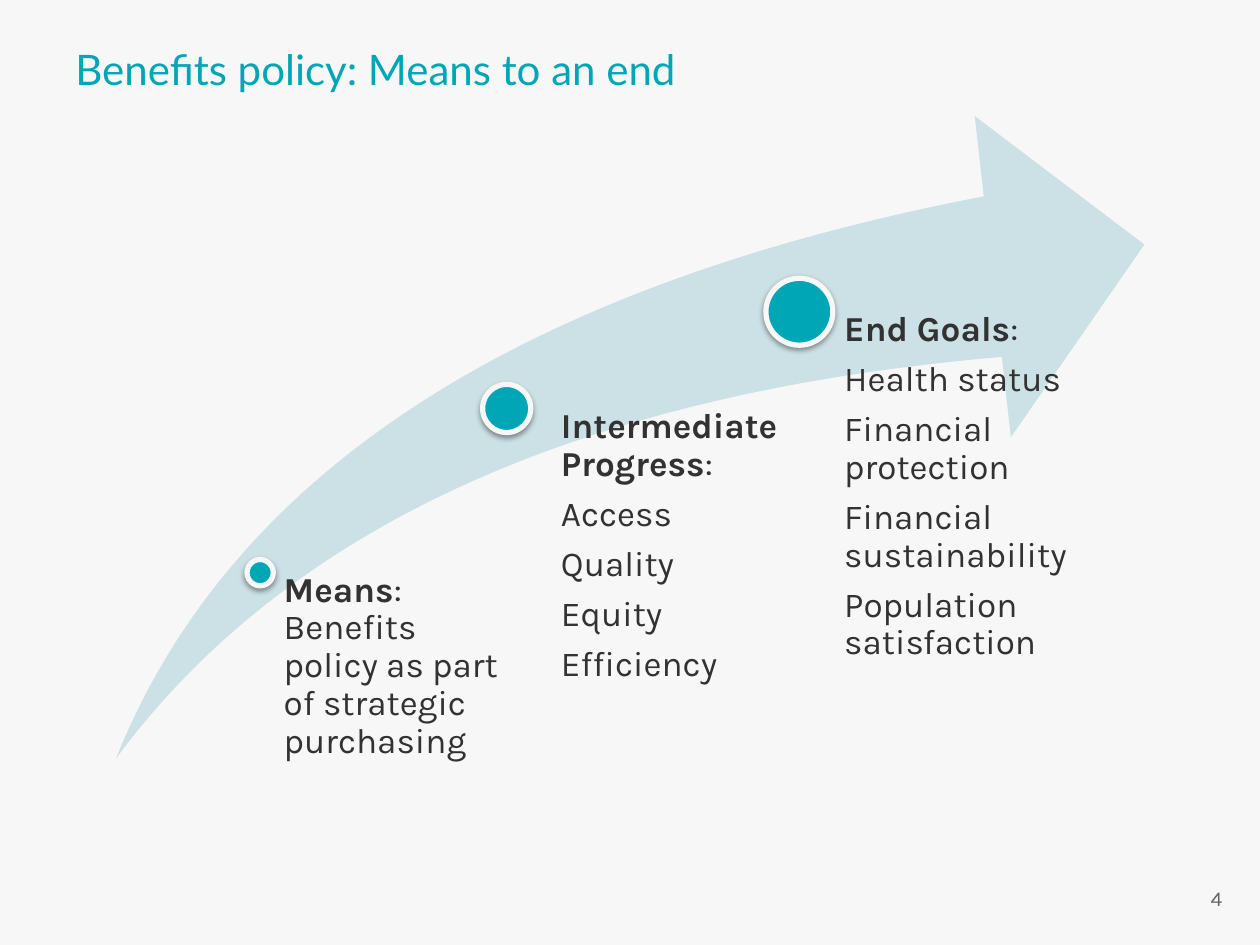
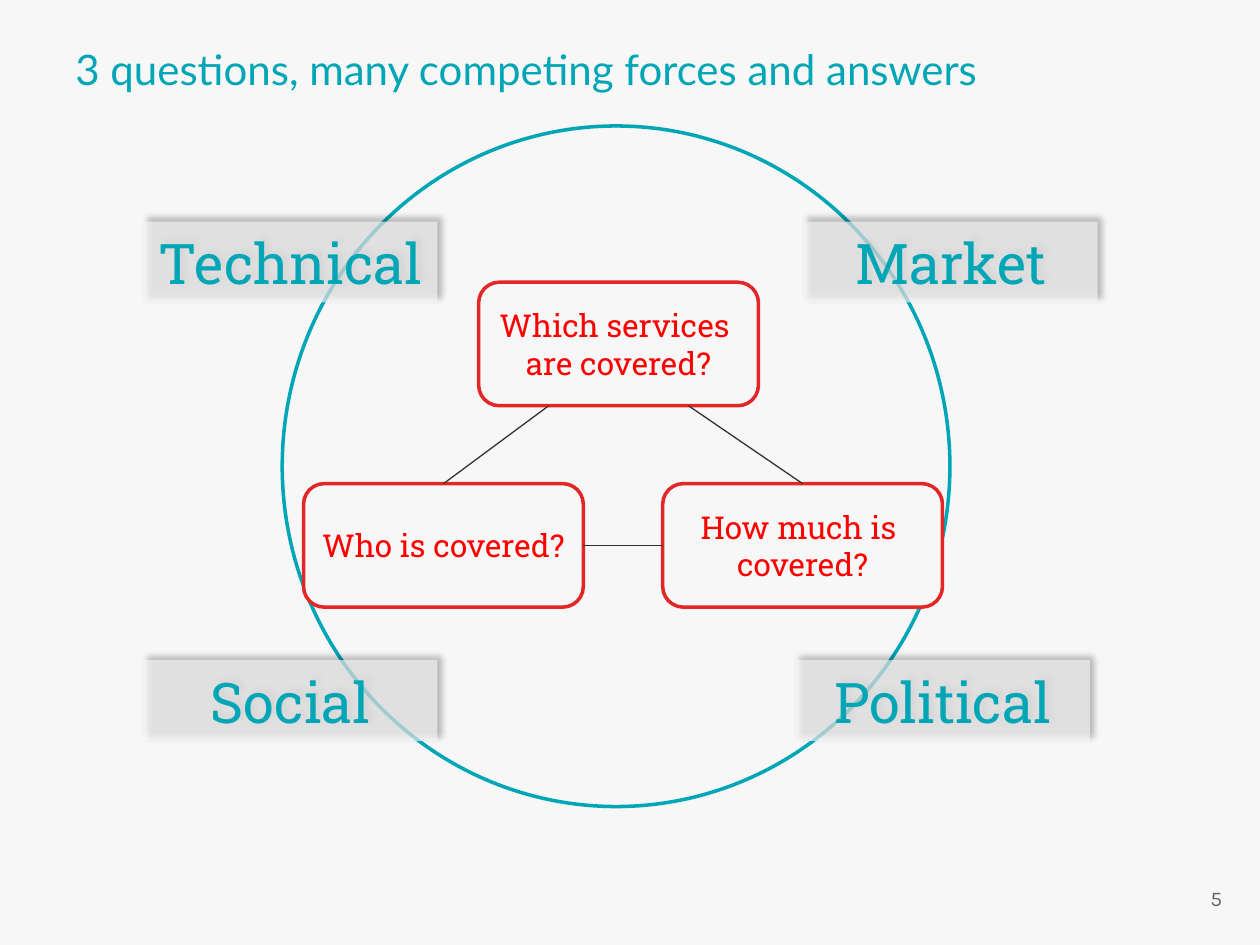
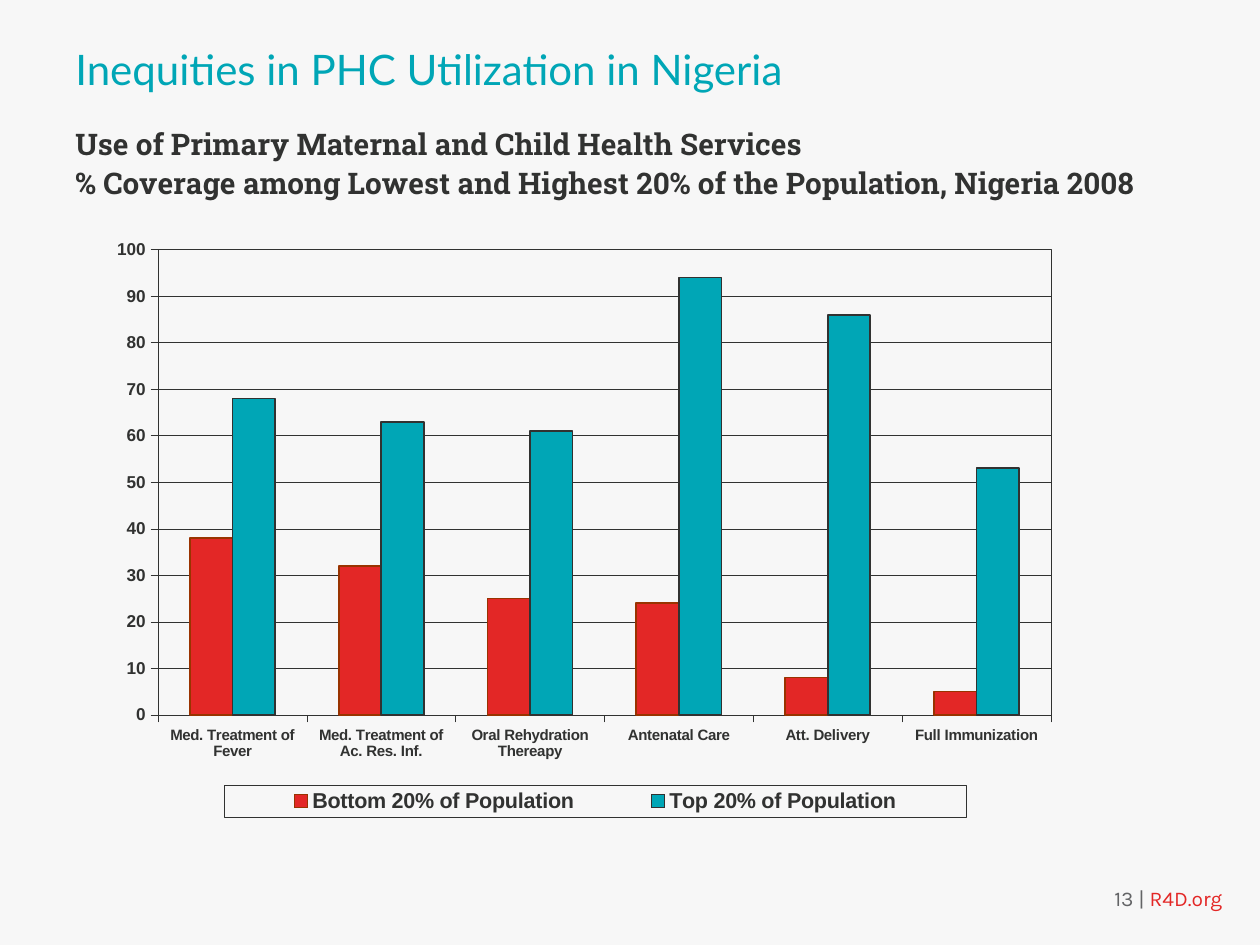
from dataclasses import dataclass

from lxml import etree
from pptx import Presentation
from pptx.chart.data import CategoryChartData
from pptx.dml.color import RGBColor
from pptx.enum.chart import XL_CHART_TYPE, XL_LEGEND_POSITION, XL_TICK_MARK
from pptx.enum.shapes import MSO_CONNECTOR, MSO_SHAPE
from pptx.enum.text import MSO_ANCHOR, PP_ALIGN
from pptx.oxml import parse_xml
from pptx.oxml.ns import nsdecls, qn
from pptx.util import Cm, Pt

ELLIPSE, RECTANGLE = MSO_SHAPE.OVAL, MSO_SHAPE.RECTANGLE
SWOOSH = MSO_SHAPE.SWOOSH_ARROW
ROUNDED = MSO_SHAPE.FLOWCHART_ALTERNATE_PROCESS
STRAIGHT = MSO_CONNECTOR.STRAIGHT
TOP, MIDDLE = MSO_ANCHOR.TOP, MSO_ANCHOR.MIDDLE
LEFT, CENTER, RIGHT = PP_ALIGN.LEFT, PP_ALIGN.CENTER, PP_ALIGN.RIGHT
COLUMNS = XL_CHART_TYPE.COLUMN_CLUSTERED
BOTTOM_LEGEND = XL_LEGEND_POSITION.BOTTOM
OUTSIDE = XL_TICK_MARK.OUTSIDE
TOP_SIDE, LEFT_SIDE, RIGHT_SIDE = 0, 1, 3


@dataclass(frozen=True)
class Theme:
    paper: str = "F7F7F7"
    teal: str = "00A6B6"
    pale_teal: str = "CCE1E5"
    ink: str = "313231"
    grey: str = "636466"
    red: str = "E32726"
    bright_red: str = "FF0000"
    brown: str = "993300"

    def font(self, role):
        name, size, bold, color = {
            "title": ("Lato", 24, False, self.teal),
            "subtitle": ("Roboto Slab", 17, True, self.ink),
            "body": ("Karla", 20, False, self.ink),
            "footer": ("Karla", 12, False, self.grey),
            "force": ("Roboto Slab", 32, False, self.teal),
            "question": ("Roboto Slab", 18, False, self.bright_red),
            "chart": ("Arial", 14.6, True, self.ink),
            "categories": ("Arial", 8.6, True, self.ink),
            "values": ("Arial", 9.8, True, self.ink),
            "legend": ("Arial", 12.3, True, self.ink),
        }[role]
        return {"name": name, "size": Pt(size), "bold": bold, "color": color}


def apply(target, values):
    for name, value in values.items():
        if name == "color":
            target.color.rgb = RGBColor.from_string(value)
        else:
            setattr(target, name, value)


def set_line(line, color, width):
    line.color.rgb = RGBColor.from_string(color)
    line.width = Pt(width)


def set_layout(parent, position, frame, inner=False):
    """Place a chart part by fractions of the chart area."""
    for old in parent.findall(qn("c:layout")):
        parent.remove(old)
    target = '<c:layoutTarget val="inner"/>' if inner else ""
    modes = "".join(f'<c:{side}Mode val="edge"/>' for side in "xy")
    sizes = "".join(f'<c:{side} val="{value}"/>' for side, value in zip("xywh", frame))
    parent.insert(position, parse_xml(
        f'<c:layout {nsdecls("c")}><c:manualLayout>{target}{modes}{sizes}'
        "</c:manualLayout></c:layout>"))


def outline(color, width):
    return parse_xml(
        f'<c:spPr {nsdecls("c", "a")}><a:noFill/><a:ln w="{Pt(width)}"><a:solidFill>'
        f'<a:srgbClr val="{color}"/></a:solidFill></a:ln></c:spPr>')


class SlideBuilder:
    def __init__(self, deck, theme):
        self.deck, self.theme, self.page = deck, theme, None

    def start(self, title, footer):
        self.page = self.deck.slides.add_slide(self.deck.slide_layouts[6])
        fill = self.page.background.fill
        fill.solid()
        fill.fore_color.rgb = RGBColor.from_string(self.theme.paper)
        self.text((1.27, 0.76, 22.86, 3.18), [title], "title")
        self.text((18.97, 17.6, 5.92, 1.02), [footer], "footer", RIGHT, anchor=MIDDLE)

    def set_text(self, frame, lines, role, align=LEFT, spacing=None, **frame_format):
        """Each line is a string or a list of (text, font changes)."""
        apply(frame, {"word_wrap": True, "vertical_anchor": TOP,
                      **frame_format})
        for index, line in enumerate(lines):
            para = frame.add_paragraph() if index else frame.paragraphs[0]
            apply(para, {"alignment": align, **(spacing or {})})
            if not index:
                para.space_before = None
            for words, changes in [(line, {})] if isinstance(line, str) else line:
                span = para.add_run()
                span.text = words
                apply(span.font, {**self.theme.font(role), **changes})

    def text(self, place, lines, role, align=LEFT, spacing=None, anchor=TOP, **margins):
        box = self.page.shapes.add_textbox(*map(Cm, place))
        self.set_text(box.text_frame, lines, role, align, spacing,
                      vertical_anchor=anchor, **margins)

    def shape(self, kind, place, fill, line=None, shadow=None, alpha=None):
        shape = self.page.shapes.add_shape(kind, *map(Cm, place))
        shape.fill.solid()
        shape.fill.fore_color.rgb = RGBColor.from_string(fill)
        if line:
            set_line(shape.line, *line)
        else:
            shape.line.fill.background()
        shape.shadow.inherit = False
        properties = shape._element.spPr
        if alpha:
            color = properties.find(qn("a:solidFill")).find(qn("a:srgbClr"))
            etree.SubElement(color, qn("a:alpha"), val=str(alpha * 1000))
        if shadow:
            opacity, blur, distance, angle = shadow
            properties.find(qn("a:effectLst")).append(parse_xml(
                f'<a:outerShdw {nsdecls("a")} blurRad="{Pt(blur)}" dist="{Pt(distance)}" '
                f'dir="{angle * 60000}" rotWithShape="0"><a:srgbClr val="000000">'
                f'<a:alpha val="{opacity * 1000}"/></a:srgbClr></a:outerShdw>'))
        return shape

    def connector(self, start, end):
        """An end is a (shape, side) pair or a (left, top) point in EMU."""
        joined = [not isinstance(point[0], int) for point in (start, end)]
        points = [(0, 0) if join else point for join, point in zip(joined, (start, end))]
        link = self.page.shapes.add_connector(STRAIGHT, *points[0], *points[1])
        if joined[0]:
            link.begin_connect(*start)
        if joined[1]:
            link.end_connect(*end)
        set_line(link.line, self.theme.ink, 0.75)
        etree.SubElement(link._element.spPr, qn("a:effectLst"))

    def column_chart(self, place, categories, series):
        """Series maps a name to (values, fill, line colour)."""
        data = CategoryChartData()
        data.categories = categories
        for name, (values, _, _) in series.items():
            data.add_series(name, values)
        chart = self.page.shapes.add_chart(COLUMNS, *map(Cm, place), data).chart
        ink = self.theme.ink
        apply(chart, {"has_title": False, "has_legend": True})
        apply(chart.font, self.theme.font("chart"))

        # Columns
        plot = chart.plots[0]
        apply(plot, {"gap_width": 150, "overlap": 0, "vary_by_categories": False})
        for bars, (_, fill, line) in zip(plot.series, series.values()):
            bars.format.fill.solid()
            bars.format.fill.fore_color.rgb = RGBColor.from_string(fill)
            set_line(bars.format.line, line, 0.96)

        # Axes
        apply(chart.value_axis, {"minimum_scale": 0, "maximum_scale": 100,
                                 "major_unit": 10, "has_major_gridlines": True})
        set_line(chart.value_axis.major_gridlines.format.line, ink, 0.25)
        for axis, role in ((chart.category_axis, "categories"),
                           (chart.value_axis, "values")):
            axis.major_tick_mark = OUTSIDE
            apply(axis.tick_labels.font, self.theme.font(role))
            set_line(axis.format.line, ink, 0.25)

        # Legend and plot frame
        legend = chart.legend
        apply(legend, {"position": BOTTOM_LEGEND, "include_in_layout": False})
        apply(legend.font, self.theme.font("legend"))
        set_layout(legend._element, 1, (0.12, 0.89, 0.79, 0.05))
        legend._element.find(qn("c:txPr")).addprevious(outline(ink, 0.25))
        plot_area = chart._chartSpace.chart.plotArea
        set_layout(plot_area, 0, (0.05, 0.05, 0.95, 0.73), inner=True)
        plot_area.append(outline(ink, 0.25))


def means_slide(builder):
    theme = builder.theme
    builder.start("Benefits policy: Means to an end", "4")
    arrow = builder.shape(SWOOSH, (2.34, 2.34, 20.73, 12.95), theme.pale_teal)
    arrow.adjustments[0] = arrow.adjustments[1] = 0.25

    # Stages: dot (left, top, size), text (left, top, width), inset, heading, lines
    bottom = 15.27
    stages = [
        ((4.98, 11.28, 0.53), (5.44, 11.53, 4.83), 0.28, "Means",
         ": Benefits policy as part of strategic purchasing", []),
        ((9.73, 7.75, 0.97), (10.8, 8.23, 4.98), 0.51, "Intermediate Progress", ":",
         ["Access", "Quality", "Equity", "Efficiency"]),
        ((15.44, 5.61, 1.35), (16.31, 6.27, 6.73), 0.71, "End Goals", ":",
         ["Health status", "Financial protection", "Financial sustainability",
          "Population satisfaction"]),
    ]
    spacing = {"line_spacing": 0.9, "space_after": Pt(7)}
    for dot, (left, top, width), inset, heading, rest, lines in stages:
        builder.shape(ELLIPSE, (*dot, dot[2]), theme.teal, (theme.paper, 3),
                      shadow=(38, 3.1, 1.6, 90))
        builder.text((left, top, width, bottom - top),
                     [[(heading, {"bold": True}), (rest, {})], *lines],
                     "body", spacing=spacing, margin_left=Cm(inset),
                     margin_top=0, margin_right=0, margin_bottom=0)


def questions_slide(builder):
    theme = builder.theme
    builder.start("3 questions, many competing forces and answers", "5")
    builder.shape(ELLIPSE, (5.69, 2.54, 13.46, 13.72), theme.paper, (theme.teal, 2))

    # Competing forces
    upper, lower = 4.47, 13.31
    for force, left, top in (("Technical", 2.9, upper), ("Political", 16.05, lower),
                             ("Social", 2.9, lower), ("Market", 16.21, upper)):
        label = builder.shape(RECTANGLE, (left, top, 5.92, 1.63), theme.paper,
                              shadow=(40, 4, 3, 315), alpha=65)
        builder.set_text(label.text_frame, [force], "force", CENTER,
                         vertical_anchor=MIDDLE)

    # Questions
    boxes = []
    for lines, left, top in ((["Which services ", "are covered?"], 9.65, 5.69),
                             (["Who is covered?"], 6.12, 9.75),
                             (["How much is ", "covered?"], 13.36, 9.75)):
        box = builder.shape(ROUNDED, (left, top, 5.64, 2.49), theme.paper, (theme.red, 2))
        builder.set_text(box.text_frame, lines, "question", CENTER,
                         vertical_anchor=MIDDLE, word_wrap=False)
        boxes.append(box)

    # Links between the questions
    which, who, how_much = boxes
    base = which.top + which.height
    quarter = which.width // 4
    builder.connector((who, TOP_SIDE), (which.left + quarter, base))
    builder.connector((which.left + 3 * quarter, base), (how_much, TOP_SIDE))
    builder.connector((who, RIGHT_SIDE), (how_much, LEFT_SIDE))


def inequities_slide(builder):
    theme = builder.theme
    builder.start("Inequities in PHC Utilization in Nigeria",
                  [("13 | ", {}), ("R4D.org", {"color": theme.red})])
    builder.text((1.27, 2.41, 22.86, 1.7),
                 ["Use of Primary Maternal and Child Health Services",
                  "% Coverage among Lowest and Highest 20% of the Population, Nigeria 2008"],
                 "subtitle", spacing={"space_before": Pt(2)})
    builder.column_chart(
        (2.24, 4.39, 18.95, 12.85),
        ["Med. Treatment of Fever", "Med. Treatment of Ac. Res. Inf.",
         "Oral Rehydration Thereapy", "Antenatal Care", "Att. Delivery",
         "Full Immunization"],
        {"Bottom 20% of Population": ((38, 32, 25, 24, 8, 5), theme.red, theme.brown),
         "Top 20% of Population": ((68, 63, 61, 94, 86, 53), theme.teal, theme.ink)})


def main():
    deck = Presentation()
    deck.slide_width, deck.slide_height = Cm(25.4), Cm(19.05)
    builder = SlideBuilder(deck, Theme())
    for build in (means_slide, questions_slide, inequities_slide):
        build(builder)
    deck.save("out.pptx")


if __name__ == "__main__":
    main()
